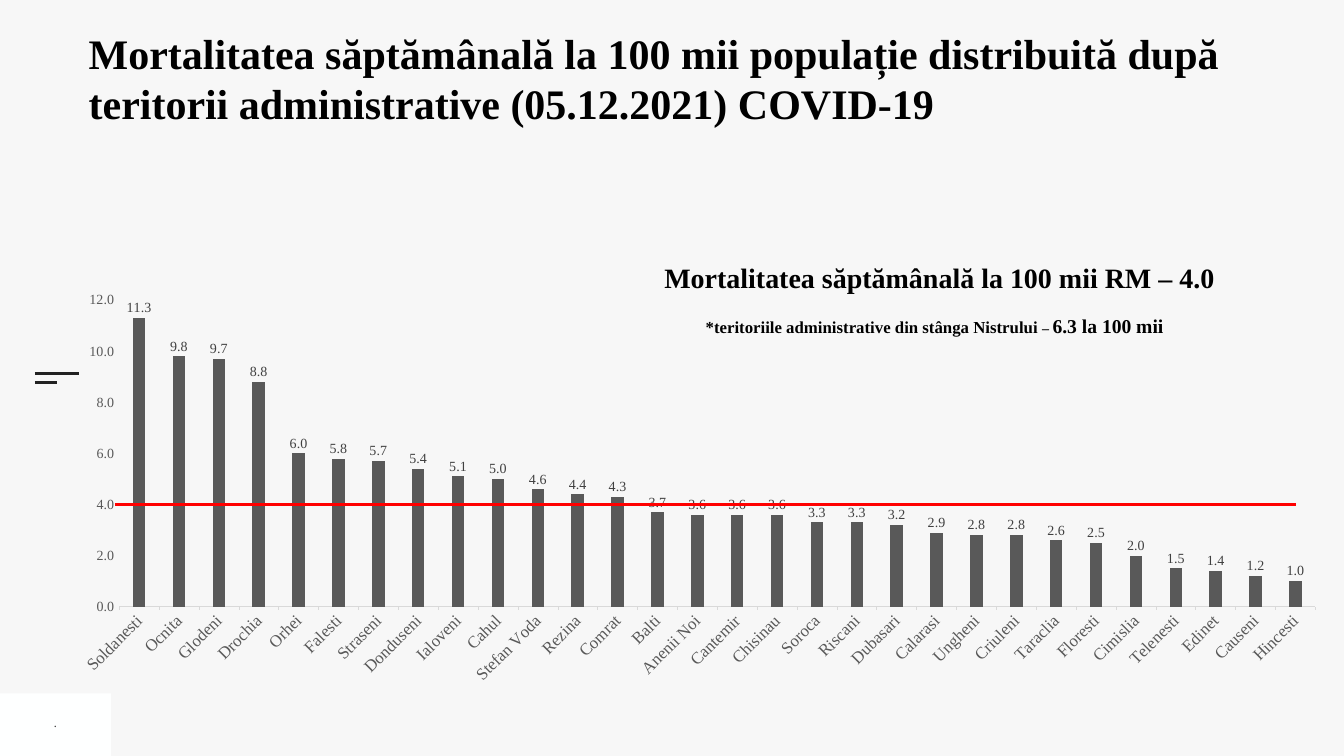
from typing import NamedTuple

from lxml.etree import SubElement
from pptx import Presentation
from pptx.chart.data import CategoryChartData
from pptx.dml.color import RGBColor
from pptx.enum.chart import XL_CHART_TYPE as ChartType
from pptx.enum.chart import XL_LABEL_POSITION as LabelPosition
from pptx.enum.chart import XL_TICK_MARK as TickMark
from pptx.enum.shapes import MSO_CONNECTOR as Connector
from pptx.enum.shapes import MSO_SHAPE as Shape
from pptx.enum.text import MSO_ANCHOR as Anchor
from pptx.enum.text import MSO_AUTO_SIZE as AutoSize
from pptx.enum.text import PP_ALIGN as Align
from pptx.oxml import parse_xml
from pptx.oxml.ns import nsdecls, qn
from pptx.util import Inches, Pt

SERIF = "Times New Roman"
SANS = "Open Sans"


class Box(NamedTuple):
    left: float
    top: float
    width: float
    height: float


class Rule(NamedTuple):
    start: float
    end: float
    y: float
    color: str
    weight: float


class Run(NamedTuple):
    text: str
    size: float
    font: str = SERIF
    color: str = "000000"
    bold: bool = True


class Caption(NamedTuple):
    box: Box
    runs: list[Run]
    wrap: bool
    inset: float = 0.05
    anchor: Anchor = Anchor.TOP


MORTALITY = {
    "Soldanesti": 11.3, "Ocnita": 9.8, "Glodeni": 9.7, "Drochia": 8.8,
    "Orhei": 6.0, "Falesti": 5.8, "Straseni": 5.7, "Donduseni": 5.4,
    "Ialoveni": 5.1, "Cahul": 5.0, "Stefan Voda": 4.6, "Rezina": 4.4,
    "Comrat": 4.3, "Balti": 3.7, "Anenii Noi": 3.6, "Cantemir": 3.6,
    "Chisinau": 3.6, "Soroca": 3.3, "Riscani": 3.3, "Dubasari": 3.2,
    "Calarasi": 2.9, "Ungheni": 2.8, "Criuleni": 2.8, "Taraclia": 2.6,
    "Floresti": 2.5, "Cimislia": 2.0, "Telenesti": 1.5, "Edinet": 1.4,
    "Causeni": 1.2, "Hincesti": 1.0,
}
PLOT_AREA = {"x": 0.054, "y": 0.047, "w": 0.939, "h": 0.653}

MENU_MARKS = [
    Rule(0.69, 1.57, 7.41, "222222", 3),
    Rule(0.69, 1.13, 7.59, "222222", 3),
]
NATIONAL_RATE = Rule(2.29, 25.71, 10.01, "FF0000", 4.5)

TITLE_BOX = Box(1.66, 0.49, 23.27, 2.12)
TITLE = Run(
    "Mortalitatea săptămânală la 100 mii populație distribuită după "
    "teritorii administrative (05.12.2021) COVID-19", 60)
CAPTIONS = [
    Caption(Box(0.97, 14.11, 0.26, 0.47), [Run(".", 16, SANS, "222222", False)],
            False, 0.1, Anchor.MIDDLE),
    Caption(Box(13.02, 5.12, 11.24, 0.77),
            [Run("Mortalitatea săptămânală la 100 mii RM – 4.0", 40)], False),
    Caption(Box(11.88, 6.18, 13.33, 0.57),
            [Run("*teritoriile administrative din stânga Nistrului ", 24),
             Run("– ", 20), Run("6.3 la 100 mii", 28)], True),
]


def rgb(color: str) -> RGBColor:
    return RGBColor.from_string(color)


def inches(box: Box) -> list[int]:
    return [Inches(length) for length in box]


def set_font(font, size: float, color: str, name: str = SERIF, bold: bool = False) -> None:
    font.size = Pt(size)
    font.name = name
    font.bold = bold
    font.color.rgb = rgb(color)


def add_run(paragraph, run: Run) -> None:
    part = paragraph.add_run()
    part.text = run.text
    set_font(part.font, run.size, run.color, run.font, run.bold)


def add_rule(slide, rule: Rule) -> None:
    y = Inches(rule.y)
    line = slide.shapes.add_connector(
        Connector.STRAIGHT, Inches(rule.start), y, Inches(rule.end), y)
    line.line.color.rgb = rgb(rule.color)
    line.line.width = Pt(rule.weight)
    SubElement(line._element.spPr, qn("a:effectLst"))


def add_caption(slide, caption: Caption) -> None:
    frame = slide.shapes.add_textbox(*inches(caption.box)).text_frame
    frame.word_wrap = caption.wrap
    frame.auto_size = AutoSize.SHAPE_TO_FIT_TEXT
    frame.vertical_anchor = caption.anchor
    frame.margin_top = frame.margin_bottom = Inches(caption.inset)
    frame.paragraphs[0].alignment = Align.CENTER
    for run in caption.runs:
        add_run(frame.paragraphs[0], run)


def fill_title(slide) -> None:
    title = slide.shapes.title
    title.left, title.top, title.width, title.height = inches(TITLE_BOX)
    frame = title.text_frame
    frame.word_wrap = True
    frame.auto_size = AutoSize.NONE
    frame.vertical_anchor = Anchor.TOP
    frame.paragraphs[0].alignment = Align.LEFT
    add_run(frame.paragraphs[0], TITLE)


def add_footer_panel(slide) -> None:
    panel = slide.shapes.add_shape(Shape.RECTANGLE, *inches(Box(0, 13.76, 2.2, 1.24)))
    panel.shadow.inherit = False
    panel.fill.solid()
    panel.fill.fore_color.rgb = rgb("FEFFFF")
    panel.line.fill.background()


def fix_plot_area(chart) -> None:
    plot_area = chart._chartSpace.chart.plotArea
    for layout in plot_area.findall(qn("c:layout")):
        plot_area.remove(layout)
    modes = "".join(f'<c:{axis}Mode val="edge"/>' for axis in "xy")
    sizes = "".join(f'<c:{key} val="{value}"/>' for key, value in PLOT_AREA.items())
    plot_area.insert(0, parse_xml(
        f'<c:layout {nsdecls("c")}><c:manualLayout><c:layoutTarget val="inner"/>'
        f"{modes}{sizes}</c:manualLayout></c:layout>"))


def add_mortality_chart(slide) -> None:
    data = CategoryChartData(number_format="0.0")
    data.categories = list(MORTALITY)
    data.add_series("Series 1", list(MORTALITY.values()))
    chart = slide.shapes.add_chart(
        ChartType.COLUMN_CLUSTERED, *inches(Box(1, 5.52, 25.28, 9.31)), data).chart
    chart.has_title = False
    chart.has_legend = False
    set_font(chart.font, 24, "000000")
    fix_plot_area(chart)

    plot = chart.plots[0]
    plot.gap_width = 219
    plot.overlap = -27
    plot.vary_by_categories = False
    bars = plot.series[0].format.fill
    bars.solid()
    bars.fore_color.rgb = rgb("595959")
    plot.has_data_labels = True
    labels = plot.data_labels
    labels.show_value = True
    labels.position = LabelPosition.OUTSIDE_END
    labels.number_format = "0.0"
    labels.number_format_is_linked = False
    set_font(labels.font, 20, "404040")

    territories = chart.category_axis
    territories.major_tick_mark = TickMark.OUTSIDE
    territories.format.line.color.rgb = rgb("D9D9D9")
    territories.format.line.width = Pt(0.75)
    set_font(territories.tick_labels.font, 24, "595959")
    territories._element.txPr.bodyPr.set("rot", "-2700000")

    rates = chart.value_axis
    rates.minimum_scale, rates.maximum_scale, rates.major_unit = 0, 12, 2
    rates.has_major_gridlines = False
    rates.major_tick_mark = TickMark.OUTSIDE
    rates.format.line.fill.background()
    rates.tick_labels.number_format = "0.0"
    rates.tick_labels.number_format_is_linked = False
    set_font(rates.tick_labels.font, 20, "595959")


def main() -> None:
    deck = Presentation()
    deck.slide_width, deck.slide_height = Inches(26.67), Inches(15)
    slide = deck.slides.add_slide(deck.slide_layouts[5])
    slide.background.fill.solid()
    slide.background.fill.fore_color.rgb = rgb("F7F7F7")
    add_footer_panel(slide)
    for mark in MENU_MARKS:
        add_rule(slide, mark)
    add_mortality_chart(slide)
    add_rule(slide, NATIONAL_RATE)
    fill_title(slide)
    for caption in CAPTIONS:
        add_caption(slide, caption)
    deck.save("out.pptx")


if __name__ == "__main__":
    main()
